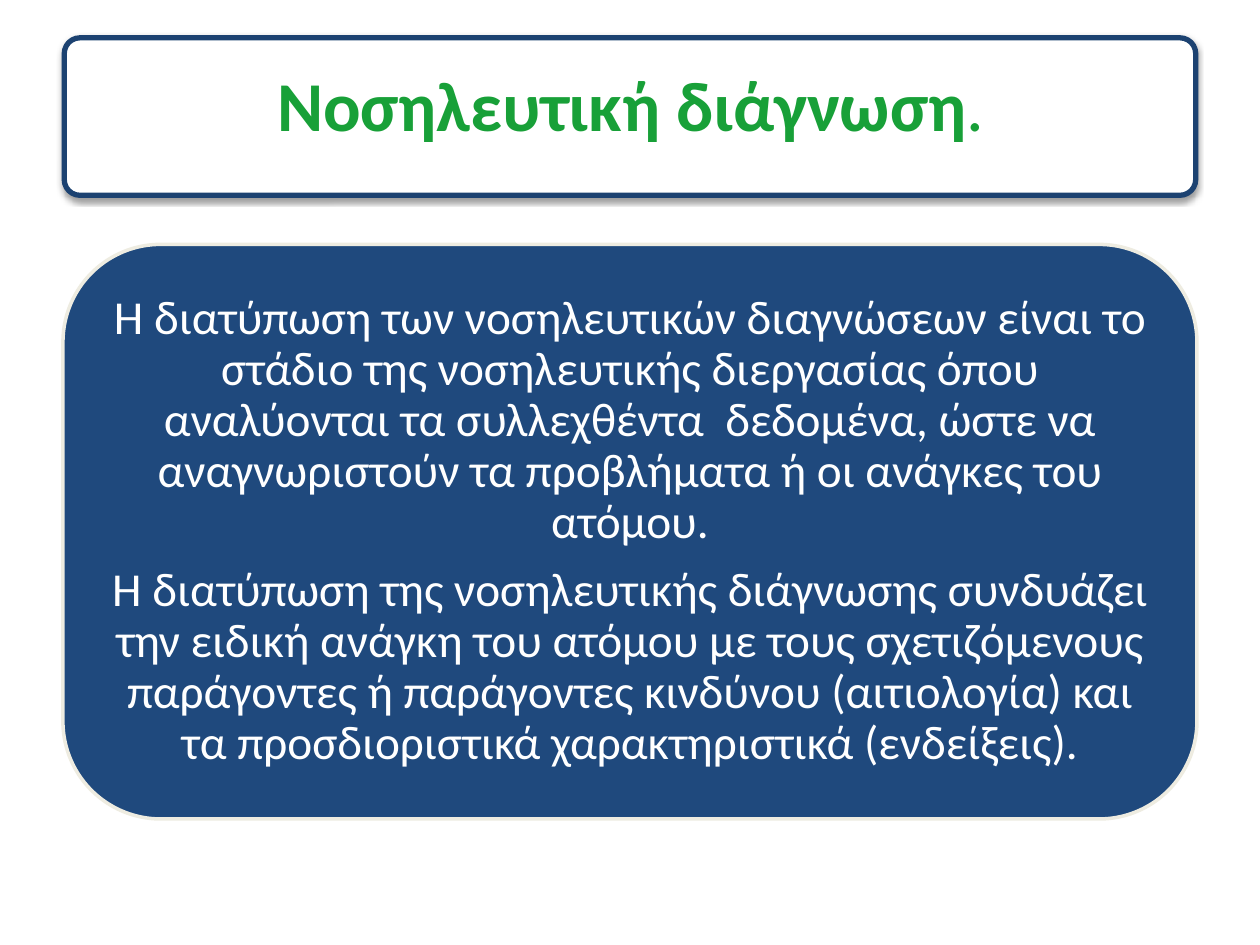
from lxml import etree
from pptx import Presentation
from pptx.dml.color import RGBColor
from pptx.enum.shapes import MSO_SHAPE as Shape
from pptx.enum.text import MSO_ANCHOR as Anchor, MSO_AUTO_SIZE as AutoSize, PP_ALIGN as Align
from pptx.oxml import parse_xml
from pptx.oxml.ns import nsdecls
from pptx.util import Inches, Pt

TITLE = [[("Νοσηλευτική διάγνωση", True), (".", False)]]
DEFINITIONS = [
    [("Η διατύπωση των νοσηλευτικών διαγνώσεων είναι το στάδιο της νοσηλευτικής "
      "διεργασίας όπου αναλύονται τα συλλεχθέντα  δεδομένα, ώστε να αναγνωριστούν "
      "τα προβλήματα ή οι ανάγκες του ατόμου.", False)],
    [("Η διατύπωση της νοσηλευτικής διάγνωσης συνδυάζει την ειδική ανάγκη του ατόμου "
      "με τους σχετιζόμενους παράγοντες ή παράγοντες κινδύνου (αιτιολογία) και τα "
      "προσδιοριστικά χαρακτηριστικά (ενδείξεις).", False)],
]

WHITE = RGBColor(0xFF, 0xFF, 0xFF)
GREEN = RGBColor(0x18, 0xA0, 0x38)
NAVY = RGBColor(0x1F, 0x49, 0x7D)
FRAME_BLUE = RGBColor(0x1C, 0x42, 0x71)
CREAM = RGBColor(0xEE, 0xEC, 0xE1)


def write(frame, paragraphs, size, color, inset, space_after=0):
    frame.word_wrap = True
    frame.auto_size = AutoSize.NONE
    frame.vertical_anchor = Anchor.MIDDLE
    frame.margin_left = frame.margin_right = Inches(inset)
    frame.margin_top = frame.margin_bottom = Inches(inset)
    for index, runs in enumerate(paragraphs):
        paragraph = frame.paragraphs[0] if index == 0 else frame.add_paragraph()
        paragraph.alignment = Align.CENTER
        paragraph.line_spacing = 0.9
        paragraph.space_before = Pt(0)
        paragraph.space_after = Pt(space_after)
        for text, bold in runs:
            run = paragraph.add_run()
            run.text = text
            run.font.name = "Calibri"
            run.font.size = Pt(size)
            run.font.bold = bold
            run.font.color.rgb = color


def add_panel(slide, box, fill, line, line_width, rounding):
    panel = slide.shapes.add_shape(Shape.ROUNDED_RECTANGLE, *map(Inches, box))
    panel.adjustments[0] = rounding
    panel.shadow.inherit = False
    panel.fill.solid()
    panel.fill.fore_color.rgb = fill
    panel.line.color.rgb = line
    panel.line.width = Pt(line_width)
    return panel


def add_soft_shadow(panel):
    effects = panel._element.spPr.find(
        "{http://schemas.openxmlformats.org/drawingml/2006/main}effectLst")
    effects.append(parse_xml(
        f'<a:outerShdw {nsdecls("a")} blurRad="{Pt(3.1)}" dist="{Pt(1.6)}" '
        'dir="5400000" rotWithShape="0"><a:srgbClr val="000000">'
        '<a:alpha val="38000"/></a:srgbClr></a:outerShdw>'))


def main():
    deck = Presentation()
    deck.slide_width, deck.slide_height = Inches(10), Inches(7.5)
    slide = deck.slides.add_slide(deck.slide_layouts[5])

    title_frame = add_panel(slide, (0.51, 0.3, 8.98, 1.25), WHITE, FRAME_BLUE, 3, 0.1)
    add_soft_shadow(title_frame)

    title = slide.shapes.title
    title_frame._element.addnext(title._element)
    title.left, title.top, title.width, title.height = map(Inches, (0.55, 0.34, 8.91, 1.04))
    write(title.text_frame, TITLE, size=40, color=GREEN, inset=0.08)

    definitions = add_panel(slide, (0.5, 1.94, 9, 4.56), NAVY, CREAM, 2, 0.17)
    write(definitions.text_frame, DEFINITIONS, size=27, color=WHITE, inset=0.11,
          space_after=9.45)

    deck.save("out.pptx")


if __name__ == "__main__":
    main()
